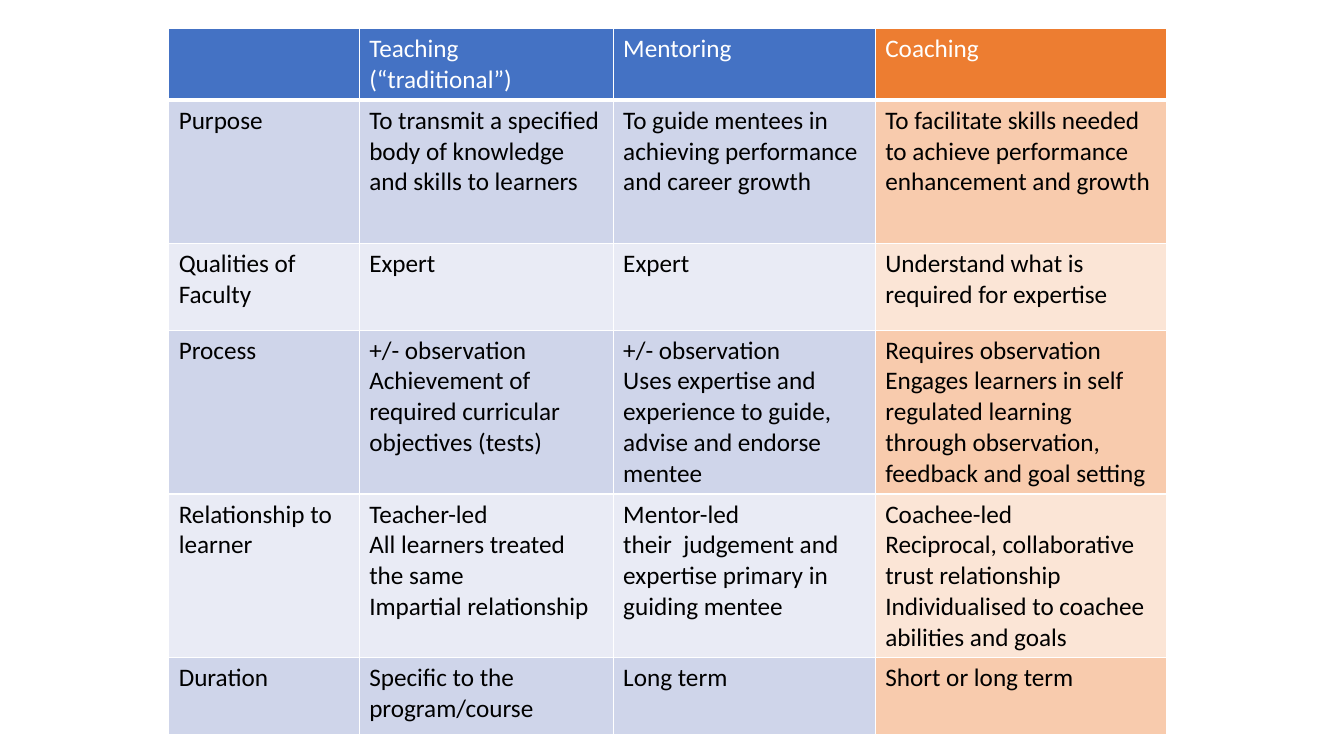
from dataclasses import dataclass

from lxml.etree import SubElement
from pptx import Presentation
from pptx.dml.color import RGBColor
from pptx.oxml.ns import qn
from pptx.util import Pt


@dataclass(frozen=True)
class Theme:
    font: str = "Calibri"
    size: int = 18
    heading: str = "FFFFFF"
    body: str = "000000"
    rule: str = "FFFFFF"
    thin: int = 1
    thick: int = 3
    general: tuple = ("4472C4", "CFD5EA", "E9EBF5")
    coaching: tuple = ("ED7D31", "F8CBAD", "FBE5D6")


THEME = Theme()
COLUMN_WIDTHS = (136.08, 181.44, 187.2, 208.08)
ROW_HEIGHTS = (51.12, 102.24, 61.92, 113.04, 102.24, 54.72)
COMPARISON = (
    ("", "Teaching\v(“traditional”)", "Mentoring", "Coaching"),
    (
        "Purpose",
        "To transmit a specified body of knowledge and skills to learners",
        "To guide mentees in achieving performance and career growth",
        "To facilitate skills needed to achieve performance enhancement and growth",
    ),
    ("Qualities of Faculty", "Expert", "Expert", "Understand what is required for expertise"),
    (
        "Process",
        "+/- observation\nAchievement of required curricular objectives (tests)",
        "+/- observation\nUses expertise and experience to guide, advise and endorse mentee",
        "Requires observation\nEngages learners in self regulated learning through observation, "
        "feedback and goal setting",
    ),
    (
        "Relationship to learner",
        "Teacher-led\nAll learners treated the same\nImpartial relationship",
        "Mentor-led\ntheir  judgement and expertise primary in guiding mentee",
        "Coachee-led\nReciprocal, collaborative trust relationship\n"
        "Individualised to coachee abilities and goals",
    ),
    ("Duration", "Specific to the program/course", "Long term", "Short or long term"),
)


def write_text(frame, text, *, color, size=THEME.size, font=THEME.font, bold=False):
    frame.text = text
    for paragraph in frame.paragraphs:
        paragraph.font.name = font
        paragraph.font.size = Pt(size)
        paragraph.font.bold = bold
        paragraph.font.color.rgb = RGBColor.from_string(color)


def rule_cell(cell, bottom):
    properties = cell._tc.get_or_add_tcPr()
    widths = {"L": THEME.thin, "R": THEME.thin, "T": THEME.thin, "B": bottom}
    for side, width in widths.items():
        edge = SubElement(properties, qn(f"a:ln{side}"), w=str(Pt(width)))
        SubElement(SubElement(edge, qn("a:solidFill")), qn("a:srgbClr"), val=THEME.rule)


def fill_cell(cell, color):
    cell.fill.solid()
    cell.fill.fore_color.rgb = RGBColor.from_string(color)


def add_comparison(slide, left, top, width, height):
    comparison = slide.shapes.add_table(
        len(ROW_HEIGHTS), len(COLUMN_WIDTHS), Pt(left), Pt(top), Pt(width), Pt(height)
    ).table
    for column, share in zip(comparison.columns, COLUMN_WIDTHS):
        column.width = Pt(width * share / sum(COLUMN_WIDTHS))
    for row, share in zip(comparison.rows, ROW_HEIGHTS):
        row.height = Pt(height * share / sum(ROW_HEIGHTS))
    for r, entries in enumerate(COMPARISON):
        is_heading = r == 0
        shade = 0 if is_heading else 2 - r % 2
        for c, entry in enumerate(entries):
            cell = comparison.cell(r, c)
            palette = THEME.coaching if c == len(entries) - 1 else THEME.general
            rule_cell(cell, THEME.thick if is_heading else THEME.thin)
            fill_cell(cell, palette[shade])
            write_text(cell.text_frame, entry, color=THEME.heading if is_heading else THEME.body)


def main():
    deck = Presentation()
    deck.slide_width, deck.slide_height = Pt(960), Pt(540)
    slide = deck.slides.add_slide(deck.slide_layouts[6])
    add_comparison(slide, 120.5, 20.5, sum(COLUMN_WIDTHS), sum(ROW_HEIGHTS))
    deck.save("out.pptx")


if __name__ == "__main__":
    main()
